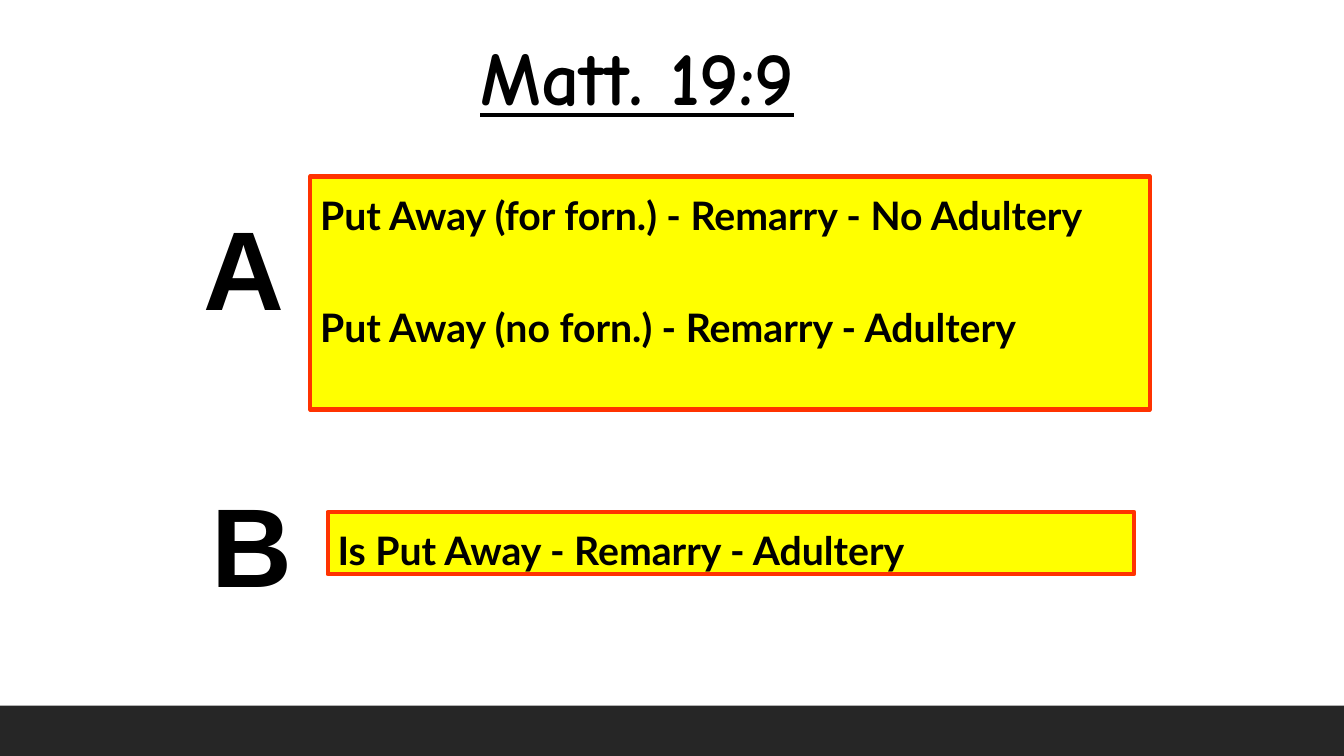
"""Build the Matt. 19:9 slide comparing cases A and B."""
from dataclasses import dataclass
from typing import Optional

from pptx import Presentation
from pptx.dml.color import RGBColor
from pptx.enum.shapes import MSO_SHAPE
from pptx.enum.text import MSO_ANCHOR, PP_ALIGN
from pptx.shapes.autoshape import Shape
from pptx.slide import Slide
from pptx.util import Cm, Pt

SLIDE_WIDTH, SLIDE_HEIGHT = 33.87, 19.05
FOOTER_HEIGHT = 1.27


@dataclass(frozen=True)
class Area:
    left: float
    top: float
    width: float
    height: float

    def lengths(self) -> tuple[Cm, Cm, Cm, Cm]:
        return Cm(self.left), Cm(self.top), Cm(self.width), Cm(self.height)


@dataclass(frozen=True)
class TextStyle:
    font: str
    size: int
    underline: bool = False
    line_spacing: float = 1.0
    space_between: float = 0


@dataclass(frozen=True)
class Label:
    area: Area
    text: str
    style: TextStyle


@dataclass(frozen=True)
class CaseBox:
    area: Area
    statements: tuple[str, ...]


TITLE_STYLE = TextStyle("Comic Neue", 54, underline=True)
LETTER_STYLE = TextStyle("Arial", 80)
STATEMENT_STYLE = TextStyle("Lato", 28, line_spacing=1.2, space_between=40.3)

CASE_BOXES = (
    CaseBox(
        Area(7.82, 4.45, 21.16, 5.87),
        (
            "Put Away (for forn.) - Remarry - No Adultery",
            "Put Away (no forn.) - Remarry - Adultery",
        ),
    ),
    CaseBox(Area(8.26, 12.9, 20.32, 1.57), ("Is Put Away - Remarry - Adultery",)),
)
LABELS = (
    Label(Area(4.88, 4.88, 2.54, 3.63), "A", LETTER_STYLE),
    Label(Area(5.08, 11.86, 2.54, 3.63), "B", LETTER_STYLE),
    Label(Area(11.86, 0.64, 11.02, 2.54), "Matt. 19:9", TITLE_STYLE),
)


def color(value: str) -> RGBColor:
    return RGBColor.from_string(value)


def write_text(shape: Shape, lines: tuple[str, ...], style: TextStyle) -> None:
    frame = shape.text_frame
    frame.word_wrap = True
    frame.vertical_anchor = MSO_ANCHOR.TOP
    for index, line in enumerate(lines):
        paragraph = frame.add_paragraph() if index else frame.paragraphs[0]
        paragraph.alignment = PP_ALIGN.LEFT
        paragraph.line_spacing = style.line_spacing
        if index:
            paragraph.space_before = Pt(style.space_between)
        run = paragraph.add_run()
        run.text = line
        run.font.name = style.font
        run.font.size = Pt(style.size)
        run.font.bold = True
        run.font.underline = style.underline
        run.font.color.rgb = color("000000")


def add_rectangle(slide: Slide, area: Area, fill: str, line: Optional[str] = None) -> Shape:
    shape = slide.shapes.add_shape(MSO_SHAPE.RECTANGLE, *area.lengths())
    shape.shadow.inherit = False
    shape.fill.solid()
    shape.fill.fore_color.rgb = color(fill)
    if line:
        shape.line.color.rgb = color(line)
        shape.line.width = Pt(3)
    else:
        shape.line.fill.background()
    return shape


def add_case_box(slide: Slide, box: CaseBox) -> None:
    shape = add_rectangle(slide, box.area, "FFFF00", "FF3300")
    write_text(shape, box.statements, STATEMENT_STYLE)


def add_label(slide: Slide, label: Label) -> None:
    shape = slide.shapes.add_textbox(*label.area.lengths())
    write_text(shape, (label.text,), label.style)


def main() -> None:
    presentation = Presentation()
    presentation.slide_width = Cm(SLIDE_WIDTH)
    presentation.slide_height = Cm(SLIDE_HEIGHT)
    slide = presentation.slides.add_slide(presentation.slide_layouts[6])
    footer = Area(0, SLIDE_HEIGHT - FOOTER_HEIGHT, SLIDE_WIDTH, FOOTER_HEIGHT)
    add_rectangle(slide, footer, "262626")
    for box in CASE_BOXES:
        add_case_box(slide, box)
    for label in LABELS:
        add_label(slide, label)
    presentation.save("out.pptx")


if __name__ == "__main__":
    main()
